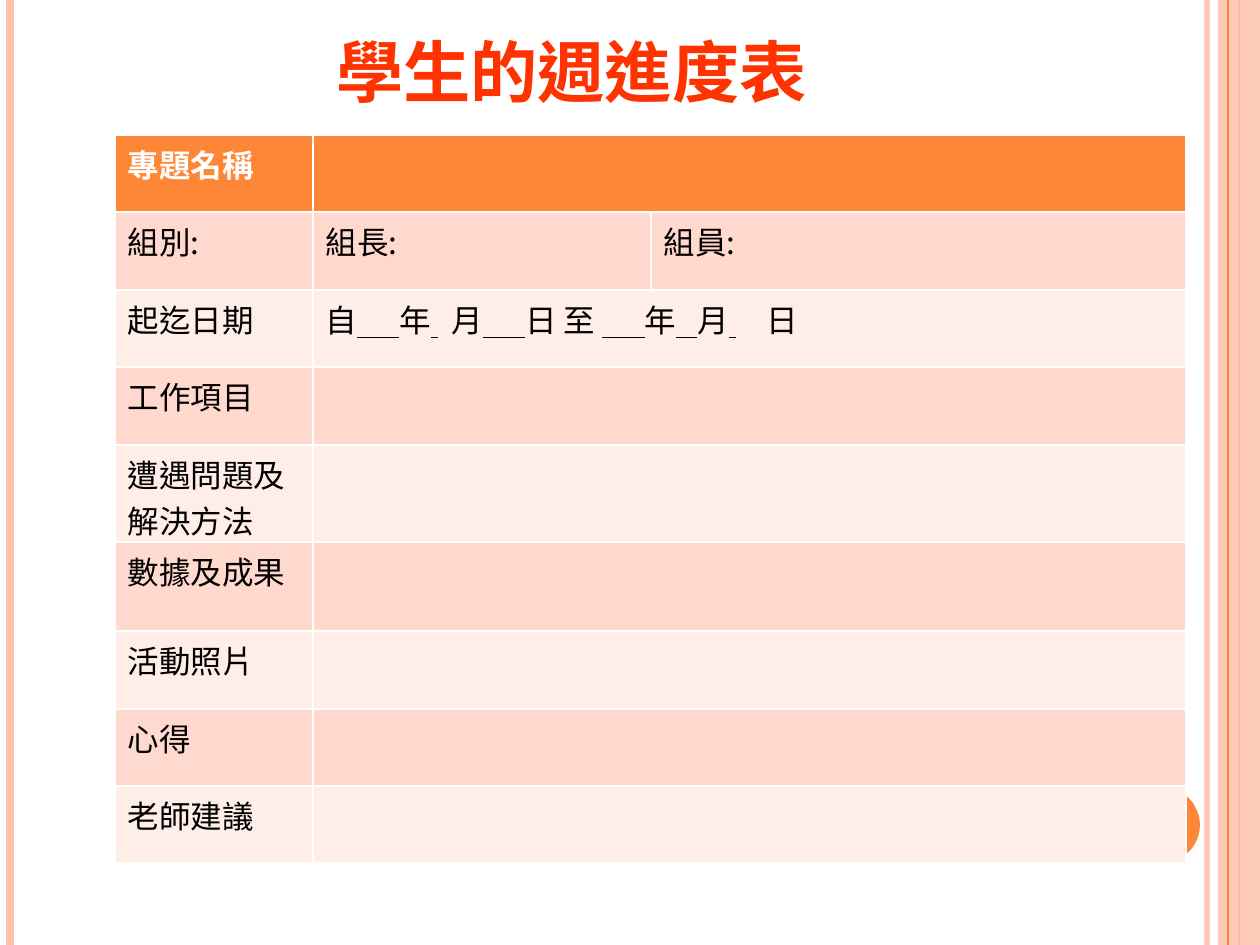
import pptx
import pptx.util
import pptx.dml.color
import pptx.enum.shapes
import pptx.enum.text
import pptx.oxml
import pptx.oxml.ns

PX = 914400 // 126
SANS, SERIF = "Noto Sans CJK SC", "TeX Gyre Schola"
HUES = {"peach": "FEC3AE", "orange": "FE8637", "red": "FF3300", "white": "FFFFFF",
        "black": "000000", "dark": "FFD9CE", "light": "FFEDE8"}


def hue(name):
    return pptx.dml.color.RGBColor.from_string(HUES[name])


def write(para, text, size=18, font=SANS, color="black", bold=False, under=False, small=False):
    run = para.add_run()
    run.text = text
    run.font.size = pptx.util.Pt(size)
    run.font.name = font
    run.font.bold = bold
    run.font.underline = under
    run.font.color.rgb = hue(color)
    props = run.font._element
    props.set("lang", "zh-TW")
    if small:
        props.set("cap", "small")
    east = pptx.oxml.parse_xml(
        f'<a:ea {pptx.oxml.ns.nsdecls("a")} typeface="{SANS}"/>')
    props.find(pptx.oxml.ns.qn("a:latin")).addnext(east)


def fade(fill, part):
    tint = fill._xPr.find(".//" + pptx.oxml.ns.qn("a:srgbClr"))
    tint.append(pptx.oxml.parse_xml(
        f'<a:alpha {pptx.oxml.ns.nsdecls("a")} val="{part * 1000}"/>'))


deck = pptx.Presentation()
deck.slide_width, deck.slide_height = 1260 * PX, 945 * PX
slide = deck.slides.add_slide(deck.slide_layouts[6])
shapes = slide.shapes
kinds = pptx.enum.shapes.MSO_SHAPE

# Side stripes, with the band between them
lines = [(1207, "peach", 3, 93), (10, "peach", 4.5, 100),
         (1239, "orange", 1.5, 100), (1228, "orange", 0.75, 100)]
for x, color, width, part in lines:
    if x == 1228:
        band = shapes.add_shape(kinds.RECTANGLE, 1218 * PX, 0, 42 * PX, 945 * PX)
        band.shadow.inherit = False
        band.fill.solid()
        band.fill.fore_color.rgb = hue("peach")
        fade(band.fill, 87)
        band.line.fill.background()
    line = shapes.add_connector(pptx.enum.shapes.MSO_CONNECTOR.STRAIGHT,
                                x * PX, 0, x * PX, 945 * PX)
    line.line.width = pptx.util.Pt(width)
    line.line.color.rgb = hue(color)
    if part < 100:
        fade(line.line.fill, part)
    line._element.spPr.append(pptx.oxml.parse_xml(
        f'<a:effectLst {pptx.oxml.ns.nsdecls("a")}/>'))

# Page disc, partly behind the table
disc = shapes.add_shape(kinds.OVAL, 1124 * PX, 787 * PX, 76 * PX, 76 * PX)
disc.shadow.inherit = False
disc.fill.solid()
disc.fill.fore_color.rgb = hue("orange")
disc.line.fill.background()

# Title
title = shapes.add_textbox(64 * PX, 0, 1030 * PX, 121 * PX).text_frame
title.word_wrap = True
title.vertical_anchor = pptx.enum.text.MSO_ANCHOR.BOTTOM
title.paragraphs[0].alignment = pptx.enum.text.PP_ALIGN.CENTER
write(title.paragraphs[0], "學生的週進度表 ", size=48, color="red", bold=True, small=True)

# Progress table
wide = [198, 338, 535]
high = [77, 78, 77, 78, 97, 89, 78, 77, 77]
names = ["專題名稱", "組別:", "起迄日期", "工作項目", "遭遇問題及解決方法",
         "數據及成果", "活動照片", "心得", "老師建議"]
table = shapes.add_table(len(high), len(wide), 115 * PX, 135 * PX,
                         sum(wide) * PX, sum(high) * PX).table
for col, width in zip(table.columns, wide):
    col.width = width * PX
for i, (height, name) in enumerate(zip(high, names)):
    table.rows[i].height = height * PX
    for j in range(len(wide)):
        fill = table.cell(i, j).fill
        fill.solid()
        fill.fore_color.rgb = hue("orange" if i == 0 else "dark" if i % 2 else "light")
    if i != 1:
        table.cell(i, 1).merge(table.cell(i, 2))
    look = {"font": SERIF, "color": "white", "bold": True} if i == 0 else {}
    write(table.cell(i, 0).text_frame.paragraphs[0], name, **look)

# Team leader and members
for j, name in enumerate(["組長:", "組員:"], 1):
    write(table.cell(1, j).text_frame.paragraphs[0], name)

# Dates: every second piece is an underlined blank
dates = ["自", "      ", "年", " \t", "月", "      ", "日 至 ",
         "      ", "年", "   ", "月", " \t", "日"]
for k, piece in enumerate(dates):
    write(table.cell(2, 1).text_frame.paragraphs[0], piece, under=k % 2 == 1)

deck.save("out.pptx")
